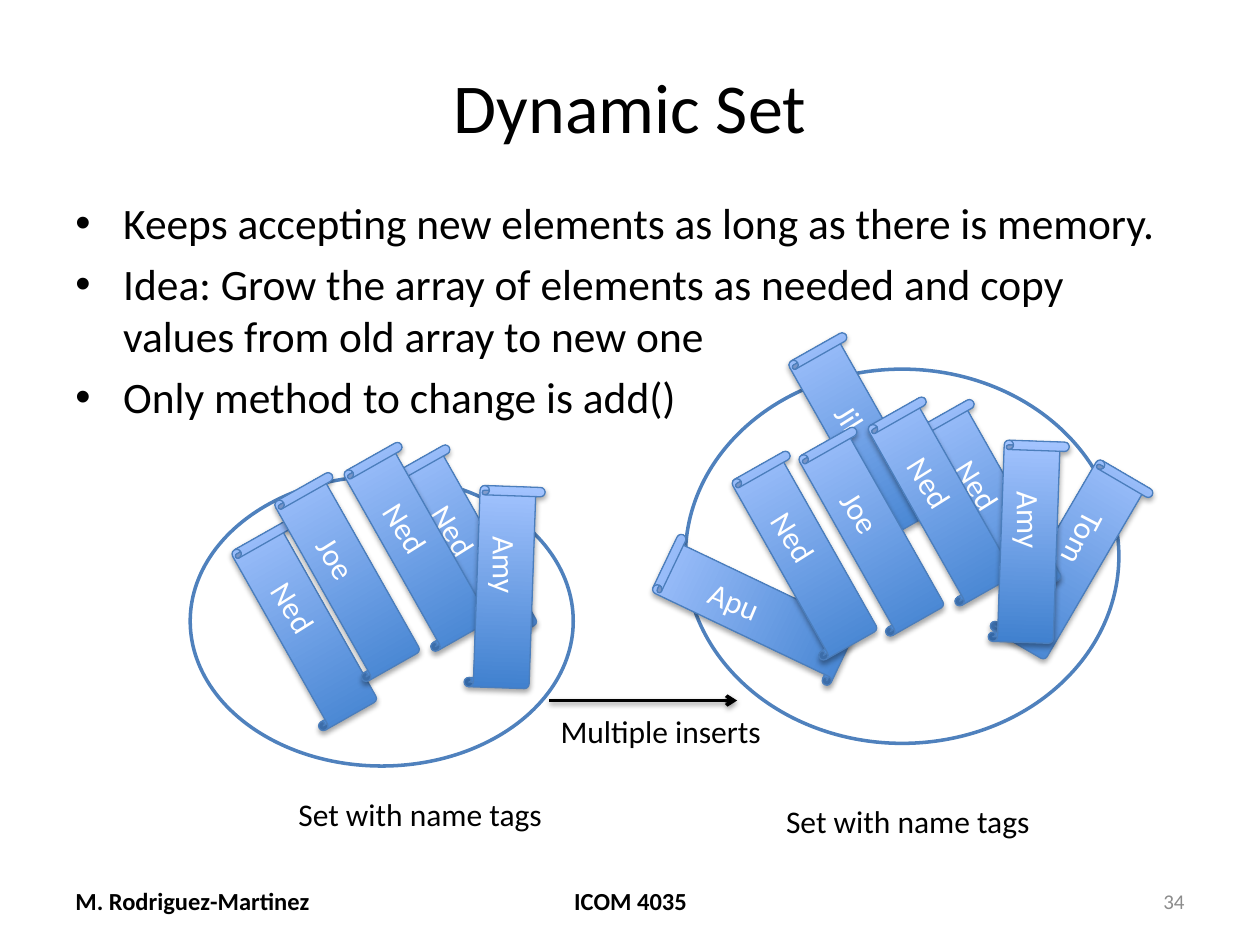
import math
from dataclasses import dataclass

import lxml.etree
import pptx
import pptx.dml.color
import pptx.enum.dml
import pptx.enum.shapes
import pptx.enum.text
import pptx.oxml
import pptx.oxml.ns
import pptx.util

Inches = pptx.util.Inches
Pt = pptx.util.Pt
Shape = pptx.enum.shapes.MSO_SHAPE
Align = pptx.enum.text.PP_ALIGN
Anchor = pptx.enum.text.MSO_ANCHOR
Fit = pptx.enum.text.MSO_AUTO_SIZE
qn = pptx.oxml.ns.qn

FONT = "Calibri"
TAG_W, TAG_H = 0.59, 1.6
NAME_H = 0.4
NAME_UP = 0.17  # from the middle of a tag towards its top
NAME_TURN = 87.3  # name angle relative to its tag
NAME_W = {"Ned": 0.62, "Joe": 0.54, "Amy": 0.66, "Apu": 0.61, "Tom": 0.66, "Jil": 0.4}
LEAN = 330.5


@dataclass
class Tag:
    name: str
    left: float
    top: float
    turn: float = LEAN


@dataclass
class Label:
    text: str
    left: float
    top: float
    width: float


@dataclass
class Oval:
    left: float
    top: float
    width: float
    height: float


OVALS = [Oval(5.44, 2.93, 3.44, 2.97), Oval(1.51, 3.78, 3.04, 2.3)]
BACK = [Tag("Apu", 5.69, 4.04, 295.5), Tag("Tom", 8.21, 3.64, 30.3), Tag("Jil", 6.54, 2.67)]
FIRST = Tag("Ned", 2.12, 4.17)
REST = [Tag("Ned", 3.39, 3.56), Tag("Joe", 2.46, 3.78),
        Tag("Ned", 3.01, 3.54), Tag("Amy", 3.71, 3.86, 2)]
SHIFT_X, SHIFT_Y = 4.16, -0.36
GROWN = [Tag("Ned", 6.09, 3.61)] + [
    Tag(t.name, t.left + SHIFT_X, t.top + SHIFT_Y, t.turn) for t in REST]
LABELS = [Label("Set with name tags", 2.27, 6.26, 2.21),
          Label("Set with name tags", 6.14, 6.32, 2.21),
          Label("Multiple inserts", 4.35, 5.6, 1.81)]
POINTS = ["Keeps accepting new elements as long as there is memory.",
          "Idea: Grow the array of elements as needed and copy values from old array to new one",
          "Only method to change is add()"]


def color(code: str):
    return pptx.dml.color.RGBColor.from_string(code)


def text(shapes, lines, left: float, top: float, width: float, height: float, *,
         size: float = 18, ink: str = "000000", bold: bool = False, align=Align.LEFT,
         anchor=Anchor.TOP, wrap: bool = True, turn: float = 0, bullet: bool = False):
    """Add a text box with one paragraph per line."""
    box = shapes.add_textbox(Inches(left), Inches(top), Inches(width), Inches(height))
    box.rotation = turn
    frame = box.text_frame
    frame.word_wrap = wrap
    frame.auto_size = Fit.NONE if wrap else Fit.SHAPE_TO_FIT_TEXT
    frame.vertical_anchor = anchor
    for i, line in enumerate(lines):
        para = frame.paragraphs[0] if i == 0 else frame.add_paragraph()
        para.alignment = align
        run = para.add_run()
        run.text = line
        font = run.font
        font.name, font.size, font.bold = FONT, Pt(size), bold
        font.color.rgb = color(ink)
        if bullet:
            para.space_before = Pt(size * 0.2)
            props = para._p.get_or_add_pPr()
            props.set("marL", str(Inches(0.38)))
            props.set("indent", str(-Inches(0.38)))
            lxml.etree.SubElement(props, qn("a:buFont")).set("typeface", "Arial")
            lxml.etree.SubElement(props, qn("a:buChar")).set("char", "•")
    return box


def shade(item, alpha: int, dist: float) -> None:
    """Give a shape or connector a soft shadow below it."""
    item._element.spPr.append(pptx.oxml.parse_xml(
        '<a:effectLst xmlns:a="http://schemas.openxmlformats.org/drawingml/2006/main">'
        f'<a:outerShdw blurRad="{Pt(3.1)}" dist="{Pt(dist)}" dir="5400000" rotWithShape="0">'
        f'<a:srgbClr val="000000"><a:alpha val="{alpha * 1000}"/></a:srgbClr>'
        '</a:outerShdw></a:effectLst>'))


def draw_oval(shapes, oval: Oval) -> None:
    item = shapes.add_shape(Shape.OVAL, Inches(oval.left), Inches(oval.top),
                            Inches(oval.width), Inches(oval.height))
    item.shadow.inherit = False
    item.fill.solid()
    item.fill.fore_color.rgb = color("FFFFFF")
    item.line.color.rgb = color("4F81BD")
    item.line.width = Pt(2)


def draw_tag(shapes, tag: Tag) -> None:
    group = shapes.add_group_shape().shapes
    item = group.add_shape(Shape.VERTICAL_SCROLL, Inches(tag.left), Inches(tag.top),
                           Inches(TAG_W), Inches(TAG_H))
    item.rotation = tag.turn
    item.fill.gradient()
    item.fill.gradient_angle = 90
    for stop, code in zip(item.fill.gradient_stops, ("3F80CE", "A4C4FF")):
        stop.color.rgb = color(code)
    item.line.color.rgb = color("4B7EBC")
    item.line.width = Pt(0.75)
    shade(item, 35, 1.8)

    angle = math.radians(tag.turn)
    mid_x = tag.left + TAG_W / 2 + NAME_UP * math.sin(angle)
    mid_y = tag.top + TAG_H / 2 - NAME_UP * math.cos(angle)
    width = NAME_W[tag.name]
    text(group, [tag.name], mid_x - width / 2, mid_y - NAME_H / 2, width, NAME_H,
         ink="FFFFFF", wrap=False, turn=(tag.turn + NAME_TURN) % 360)


def draw_arrow(shapes, left: float, right: float, top: float) -> None:
    item = shapes.add_connector(pptx.enum.shapes.MSO_CONNECTOR.STRAIGHT,
                                Inches(left), Inches(top), Inches(right), Inches(top))
    item.line.color.rgb = color("000000")
    item.line.width = Pt(2)
    line = item.line._get_or_add_ln()
    lxml.etree.SubElement(line, qn("a:tailEnd")).set("type", "arrow")
    shade(item, 38, 1.6)


def main() -> None:
    deck = pptx.Presentation()
    deck.slide_width, deck.slide_height = Inches(10), Inches(7.5)
    shapes = deck.slides.add_slide(deck.slide_layouts[6]).shapes

    for oval in OVALS:
        draw_oval(shapes, oval)
    for tag in BACK:
        draw_tag(shapes, tag)

    text(shapes, ["Dynamic Set"], 0.5, 0.3, 9, 1.07, size=40,
         align=Align.CENTER, anchor=Anchor.MIDDLE)
    text(shapes, POINTS, 0.5, 1.51, 9, 1.77, size=24.8, bullet=True)
    text(shapes, ["M. Rodriguez-Martinez"], 0.5, 6.95, 2.33, 0.4, size=14,
         bold=True, anchor=Anchor.MIDDLE)
    text(shapes, ["ICOM 4035"], 3.42, 6.95, 3.17, 0.4, size=14,
         bold=True, align=Align.CENTER, anchor=Anchor.MIDDLE)
    text(shapes, ["34"], 7.17, 6.95, 2.33, 0.4, size=12, ink="8C8C8C",
         align=Align.RIGHT, anchor=Anchor.MIDDLE)

    for tag in [FIRST, *REST, *GROWN]:
        draw_tag(shapes, tag)
    for label in LABELS:
        text(shapes, [label.text], label.left, label.top, label.width, 0.4, wrap=False)
    draw_arrow(shapes, 4.36, 5.85, 5.56)

    deck.save("out.pptx")


if __name__ == "__main__":
    main()
